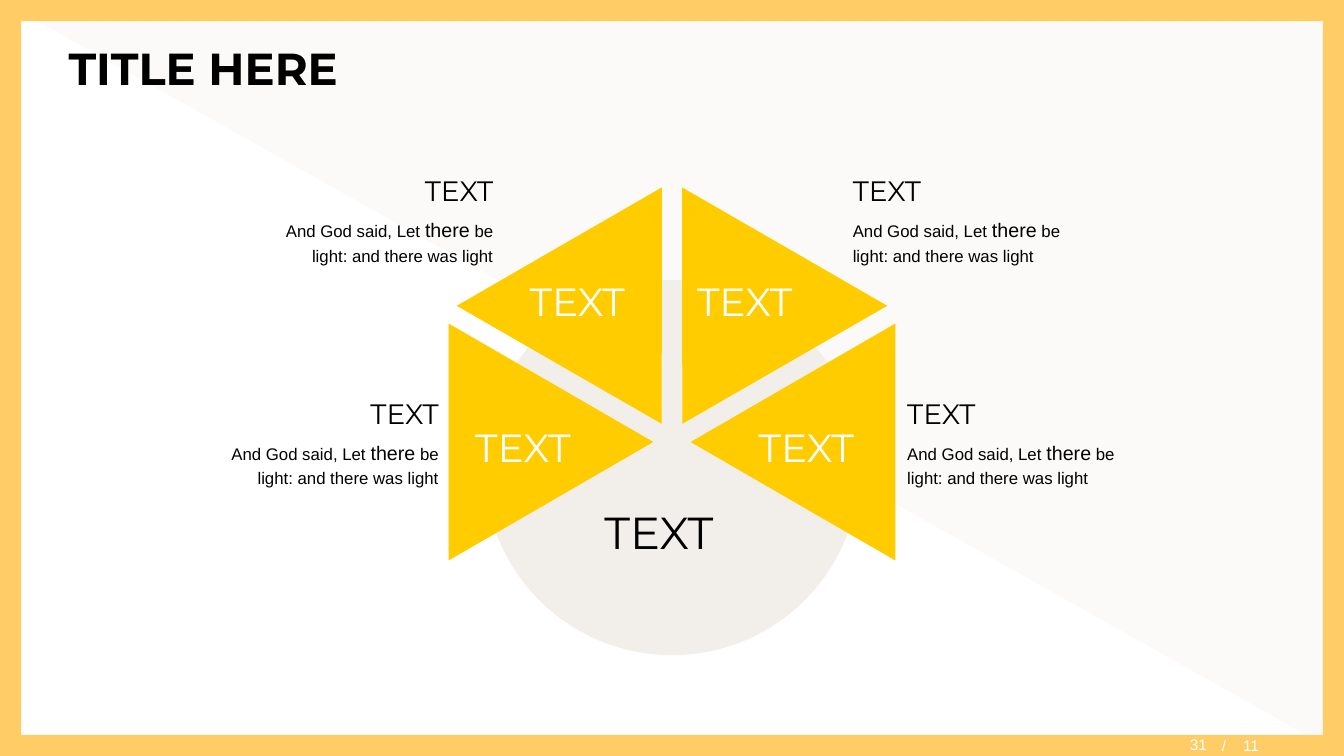
from dataclasses import dataclass

from lxml import etree
from pptx import Presentation
from pptx.dml.color import RGBColor
from pptx.enum.shapes import MSO_SHAPE
from pptx.enum.text import MSO_ANCHOR, MSO_AUTO_SIZE, PP_ALIGN
from pptx.oxml.ns import qn
from pptx.util import Inches, Pt

FRAME = MSO_SHAPE.FRAME
OVAL = MSO_SHAPE.OVAL
TRIANGLE = MSO_SHAPE.ISOSCELES_TRIANGLE
RIGHT_TRIANGLE = MSO_SHAPE.RIGHT_TRIANGLE
LEFT, RIGHT = PP_ALIGN.LEFT, PP_ALIGN.RIGHT
MIDDLE = MSO_ANCHOR.MIDDLE
GROW, FIXED = MSO_AUTO_SIZE.SHAPE_TO_FIT_TEXT, MSO_AUTO_SIZE.NONE
TITLE_ONLY = 5


@dataclass(frozen=True)
class Theme:
    heading_font: str = "Montserrat"
    body_font: str = "Arial"
    black: str = "000000"
    white: str = "FFFFFF"
    wash: str = "FBFAF8"
    border: str = "FFCC66"
    disc: str = "F2EFEA"
    wedge: str = "FFCC00"
    title_size: int = 32
    hub_size: int = 32
    wedge_size: int = 28
    heading_size: int = 20
    strong_size: int = 14
    body_size: int = 12
    page_size: int = 11


THEME = Theme()
SLIDE_WIDTH, SLIDE_HEIGHT = 13.33, 7.5


def place(shape, left, top, width, height):
    shape.left, shape.top = Inches(left), Inches(top)
    shape.width, shape.height = Inches(width), Inches(height)


def add_filled(slide, kind, box, color, rotation=0):
    shape = slide.shapes.add_shape(kind, *map(Inches, box))
    shape.shadow.inherit = False
    shape.fill.solid()
    shape.fill.fore_color.rgb = RGBColor.from_string(color)
    shape.line.fill.background()
    shape.rotation = rotation
    return shape


def style_run(run, size, font_name, color, bold=False):
    run.font.size = Pt(size)
    run.font.name = font_name
    run.font.bold = bold
    run.font.color.rgb = RGBColor.from_string(color)


def add_text_box(slide, box, wrap=True, auto_size=GROW):
    text_frame = slide.shapes.add_textbox(*map(Inches, box)).text_frame
    text_frame.word_wrap = wrap
    text_frame.auto_size = auto_size
    return text_frame


def set_spacing(paragraph, alignment=LEFT):
    paragraph.alignment = alignment
    paragraph.line_spacing = 1.2
    paragraph.space_before = paragraph.space_after = Pt(2)


def add_label(slide, box, size, color):
    text_frame = add_text_box(slide, box, wrap=False)
    text_frame.text = "TEXT"
    paragraph = text_frame.paragraphs[0]
    set_spacing(paragraph)
    style_run(paragraph.runs[0], size, THEME.heading_font, color)


def add_backdrop(slide, box):
    add_filled(slide, RIGHT_TRIANGLE, box, THEME.wash, rotation=180)
    add_filled(slide, FRAME, box, THEME.border).adjustments[0] = 0.028


def add_title(slide, box):
    title = slide.shapes.title
    title.element.getparent().append(title.element)  # bring above the backdrop
    place(title, *box)
    title.text_frame.text = "TITLE HERE"
    title.text_frame.vertical_anchor = MIDDLE
    paragraph = title.text_frame.paragraphs[0]
    paragraph.alignment = LEFT
    style_run(paragraph.runs[0], THEME.title_size, THEME.heading_font,
              THEME.black, bold=True)


def add_page_number(slide, box):
    left, top, width, height = box
    current_width = 2.59
    current = add_text_box(slide, (left, top + 0.02, current_width, height),
                           auto_size=FIXED)
    current.margin_top = 0
    total = add_text_box(slide, (left + 2.54, top, width - 2.54, height),
                         auto_size=FIXED)
    for text_frame, text, alignment in ((current, "31", RIGHT),
                                        (total, "/\t11", LEFT)):
        text_frame.text = text
        text_frame.vertical_anchor = MIDDLE
        paragraph = text_frame.paragraphs[0]
        paragraph.alignment = alignment
        style_run(paragraph.runs[0], THEME.page_size, THEME.body_font, THEME.white)
    # Tab stop between the slash and the page total
    properties = total.paragraphs[0]._p.get_or_add_pPr()
    tab_list = etree.SubElement(properties, qn("a:tabLst"))
    etree.SubElement(tab_list, qn("a:tab"), pos=str(Inches(0.21)), algn="l")


def add_wheel(slide, box):
    left, top, width, height = box
    center = left + width / 2
    # Disc
    diameter = 3.72
    add_filled(slide, OVAL, (center - diameter / 2, top + height - diameter,
                             diameter, diameter), THEME.disc)
    # Wedges, mirrored about the centre: offset from centre, top, rotation
    base, depth = 2.35, 2.03
    for offset, wedge_top, rotation in ((1.2, 1.51, 90), (0.61, 0.45, 150)):
        for side, angle in ((-1, rotation), (1, 360 - rotation)):
            wedge_left = center + side * offset - base / 2
            add_filled(slide, TRIANGLE, (wedge_left, top + wedge_top, base, depth),
                       THEME.wedge, rotation=angle)
    # Labels
    add_label(slide, (center - 0.77, top + 2.99, 1.52, 0.75),
              THEME.hub_size, THEME.black)
    for label_top, label_offsets in ((0.75, (-1.51, 0.15)), (2.2, (-2.05, 0.76))):
        for offset in label_offsets:
            add_label(slide, (center + offset, top + label_top, 1.36, 0.67),
                      THEME.wedge_size, THEME.white)


def add_caption(slide, box, alignment):
    text_frame = add_text_box(slide, box)
    text_frame.text = "TEXT"
    heading = text_frame.paragraphs[0]
    body = text_frame.add_paragraph()
    set_spacing(heading, alignment)
    set_spacing(body, alignment)
    style_run(heading.runs[0], THEME.heading_size, THEME.heading_font, THEME.black)
    for text, size in (("And God said, Let ", THEME.body_size),
                       ("there", THEME.strong_size),
                       (" be light: and there was light", THEME.body_size)):
        run = body.add_run()
        run.text = text
        style_run(run, size, THEME.body_font, THEME.black)


def add_captions(slide, box):
    left, top, width, height = box
    caption_width, caption_height = 2.34, 1.13
    for inset, caption_top in ((0.54, top), (0, top + height - caption_height)):
        right_edge = left + width - inset - caption_width
        for caption_left, alignment in ((left + inset, RIGHT), (right_edge, LEFT)):
            add_caption(slide, (caption_left, caption_top, caption_width,
                                caption_height), alignment)


def main():
    presentation = Presentation()
    presentation.slide_width = Inches(SLIDE_WIDTH)
    presentation.slide_height = Inches(SLIDE_HEIGHT)
    slide = presentation.slides.add_slide(presentation.slide_layouts[TITLE_ONLY])
    add_backdrop(slide, (0, 0, SLIDE_WIDTH, SLIDE_HEIGHT))
    add_title(slide, (0.58, 0.28, 12.18, 0.79))
    add_page_number(slide, (9.48, 7.3, 3.85, 0.18))
    add_wheel(slide, (4.45, 1.86, 4.43, 4.64))
    add_captions(slide, (2.11, 1.61, 9.13, 3.34))
    presentation.save("out.pptx")


if __name__ == "__main__":
    main()
